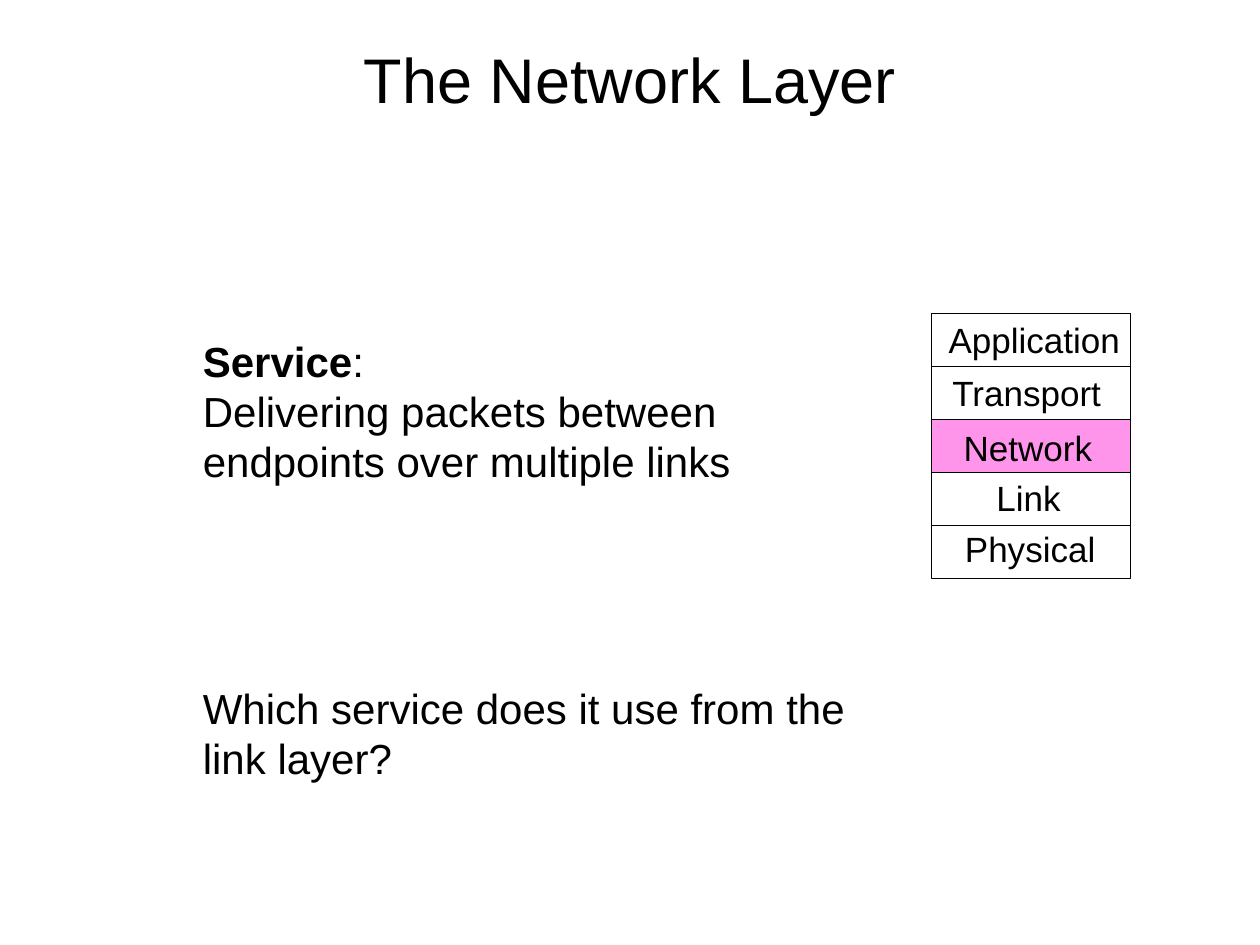
from dataclasses import dataclass

from pptx import Presentation
from pptx.dml.color import RGBColor
from pptx.enum.shapes import MSO_SHAPE as Shape
from pptx.enum.text import MSO_ANCHOR as Anchor, MSO_AUTO_SIZE as AutoSize, PP_ALIGN as Align
from pptx.oxml.xmlchemy import OxmlElement as Element
from pptx.util import Inches, Pt

WIDTH, HEIGHT = 10, 7.5


@dataclass(frozen=True)
class Theme:
    font: str = "Arial"
    ink: RGBColor = RGBColor(0, 0, 0)
    highlight: RGBColor = RGBColor(0xFF, 0x2B, 0xD8)
    title: int = 36
    body: int = 24
    label: int = 20
    outline: float = 0.75


def share(left, top, width, height):
    """Turn shares of the slide's size into lengths."""
    return [Inches(part * side) for part, side in
            zip((left, top, width, height), (WIDTH, HEIGHT) * 2)]


class SlideBuilder:
    def __init__(self, slide, theme):
        self.slide = slide
        self.theme = theme

    def add_words(self, paragraph, runs, size, **layout):
        for text, bold in runs:
            if text == "\n":
                paragraph.add_line_break()
                continue
            run = paragraph.add_run()
            run.text = text
            style = {"name": self.theme.font, "size": Pt(size), "bold": bold}
            for key, value in style.items():
                setattr(run.font, key, value)
            run.font.color.rgb = self.theme.ink
        for key, value in layout.items():
            setattr(paragraph, key, value)

    def place(self, placeholder, box):
        for key, value in zip(("left", "top", "width", "height"), share(*box)):
            setattr(placeholder, key, value)
        placeholder.text_frame.auto_size = AutoSize.NONE
        return placeholder.text_frame

    def title(self, text, box):
        frame = self.place(self.slide.shapes.title, box)
        frame.vertical_anchor = Anchor.MIDDLE
        self.add_words(frame.paragraphs[0], [(text, False)], self.theme.title,
                       alignment=Align.CENTER)

    def body(self, entries, box):
        frame = self.place(self.slide.placeholders[1], box)
        for index, (gap, runs) in enumerate(entries):
            paragraph = frame.add_paragraph() if index else frame.paragraphs[0]
            self.add_words(paragraph, runs, self.theme.body,
                           space_before=Pt(gap), line_spacing=Pt(28.8))
            # Plain paragraphs: no indent, no bullet
            properties = paragraph._p.get_or_add_pPr()
            properties.set("marL", "0")
            properties.set("indent", "0")
            properties.append(Element("a:buNone"))

    def cell(self, group, box, highlighted):
        cell = group.shapes.add_shape(Shape.RECTANGLE, *share(*box))
        cell.shadow.inherit = False
        cell.line.color.rgb = self.theme.ink
        cell.line.width = Pt(self.theme.outline)
        if highlighted:
            cell.fill.solid()
            cell.fill.fore_color.rgb = self.theme.highlight
            alpha = Element("a:alpha")
            alpha.set("val", "50000")
            cell.fill._xPr.find(".//{*}srgbClr").append(alpha)
        else:
            cell.fill.background()

    def label(self, group, text, box):
        frame = group.shapes.add_textbox(*share(*box)).text_frame
        frame.word_wrap = False
        frame.auto_size = AutoSize.SHAPE_TO_FIT_TEXT
        self.add_words(frame.paragraphs[0], [(text, False)], self.theme.label)

    def layer_stack(self, layers, current, left, top, width, row):
        group = self.slide.shapes.add_group_shape()
        for index, name in enumerate(layers):
            self.cell(group, (left, top + index * row, width, row), name == current)
        for name, (label_left, label_top, label_width) in layers.items():
            self.label(group, name, (label_left, label_top, label_width, row))


def main():
    deck = Presentation()
    deck.slide_width, deck.slide_height = Inches(WIDTH), Inches(HEIGHT)
    builder = SlideBuilder(deck.slides.add_slide(deck.slide_layouts[1]), Theme())

    # Heading
    builder.title("The Network Layer", (0, 0, 1, 1 / 6))

    # Service definition and question: (space before, runs)
    service = [("Service", True), (": ", False), ("\n", False),
               ("Delivering packets between endpoints over multiple links", False)]
    question = [("Which service does it use from the link layer?", False)]
    builder.body([(18, service), (112, question)], (0.151, 0.348, 0.555, 0.587))

    # Protocol layers: label left, top and width as slide shares
    layers = {
        "Application": (0.743, 0.33, 0.156),
        "Transport": (0.746, 0.387, 0.139),
        "Network": (0.755, 0.445, 0.122),
        "Link": (0.781, 0.498, 0.072),
        "Physical": (0.756, 0.552, 0.124),
    }
    builder.layer_stack(layers, "Network", left=0.739, top=0.332,
                        width=0.158, row=0.056)

    deck.save("out.pptx")


if __name__ == "__main__":
    main()
